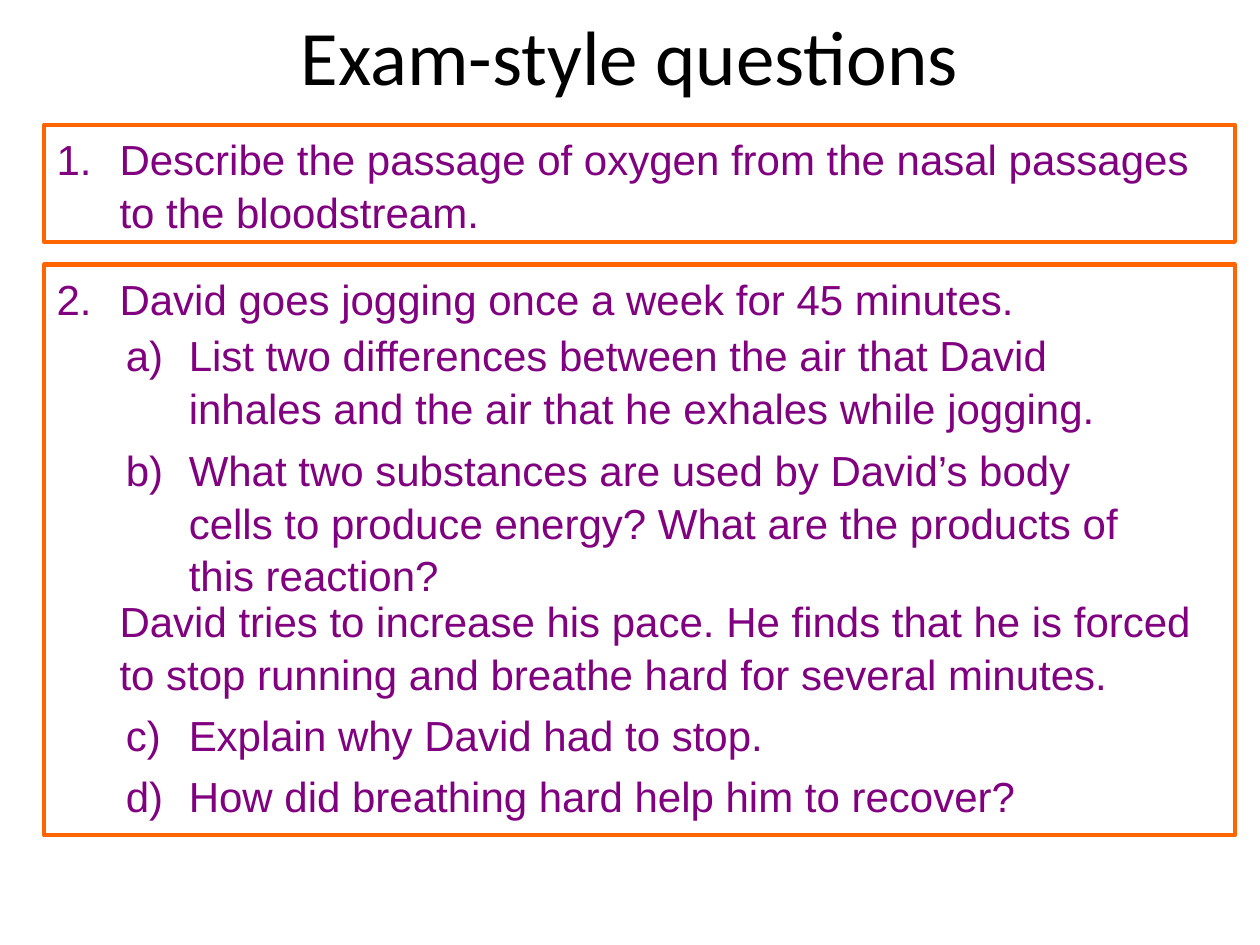
from lxml import etree
from pptx import Presentation
from pptx.dml.color import RGBColor
from pptx.enum.shapes import MSO_SHAPE
from pptx.enum.text import MSO_ANCHOR, PP_ALIGN
from pptx.oxml.ns import qn
from pptx.util import Inches, Pt

RECTANGLE = MSO_SHAPE.RECTANGLE
TOP, MIDDLE = MSO_ANCHOR.TOP, MSO_ANCHOR.MIDDLE
LEFT, CENTER = PP_ALIGN.LEFT, PP_ALIGN.CENTER

THEME = {
    "title": {"font": "Calibri", "size": 44, "color": "000000"},
    "body": {"font": "Arial", "size": 24, "color": "800080"},
    "border": "FF6600",
    "border_width": 2.5,
    "line_spacing": 1.05,
    "paragraph_gap": 4.8,
    "hanging_indent": 0.5,
}
SLIDE_WIDTH, SLIDE_HEIGHT = 10, 7.5
QUESTION_COLUMN = (0.35, 9.45)  # left, width
PART_COLUMN = (0.9, 8.43)
NUMBER, LETTER = "arabicPeriod", "alphaLcParenR"

TITLE = "Exam-style questions"
# column, top, height, framed, numbering scheme, first number, paragraphs
BLOCKS = [
    (QUESTION_COLUMN, 0.99, 0.93, True, NUMBER, 1, [
        "Describe the passage of oxygen from the nasal passages to the bloodstream."]),
    (QUESTION_COLUMN, 2.1, 4.53, True, NUMBER, 2, [
        "David goes jogging once a week for 45 minutes."]),
    (PART_COLUMN, 2.55, 2.18, False, LETTER, 1, [
        "List two differences between the air that David inhales and the air "
        "that he exhales while jogging.",
        "What two substances are used by David’s body cells to produce energy? "
        "What are the products of this reaction?"]),
    (QUESTION_COLUMN, 4.66, 0.9, False, None, None, [
        "David tries to increase his pace. He finds that he is forced to stop "
        "running and breathe hard for several minutes."]),
    (PART_COLUMN, 5.56, 0.98, False, LETTER, 3, [
        "Explain why David had to stop.",
        "How did breathing hard help him to recover?"]),
]


def add_text(paragraph, text, style):
    run = paragraph.add_run()
    run.text = text
    run.font.name = style["font"]
    run.font.size = Pt(style["size"])
    run.font.color.rgb = RGBColor.from_string(style["color"])


def set_numbering(paragraph, scheme, start):
    """Indent the paragraph, with a hanging automatic number if it has a scheme."""
    properties = paragraph._p.get_or_add_pPr()
    indent = Inches(THEME["hanging_indent"])
    properties.set("marL", str(indent))
    properties.set("indent", str(-indent if scheme else 0))
    if scheme:
        etree.SubElement(properties, qn("a:buFont"), typeface=THEME["body"]["font"])
        etree.SubElement(properties, qn("a:buAutoNum"), type=scheme, startAt=str(start))


def add_frame(slide, box):
    shape = slide.shapes.add_shape(RECTANGLE, *box)
    shape.shadow.inherit = False
    shape.fill.background()
    shape.line.color.rgb = RGBColor.from_string(THEME["border"])
    shape.line.width = Pt(THEME["border_width"])
    return shape


def add_title(slide):
    width = 0.9 * SLIDE_WIDTH
    left = (SLIDE_WIDTH - width) / 2
    shape = slide.shapes.add_textbox(
        Inches(left), Inches(-0.19), Inches(width), Inches(1.25))
    frame = shape.text_frame
    frame.word_wrap = True
    frame.vertical_anchor = MIDDLE
    frame.paragraphs[0].alignment = CENTER
    add_text(frame.paragraphs[0], TITLE, THEME["title"])


def add_block(slide, column, top, height, framed, scheme, start, texts):
    left, width = column
    box = [Inches(value) for value in (left, top, width, height)]
    shape = add_frame(slide, box) if framed else slide.shapes.add_textbox(*box)
    frame = shape.text_frame
    frame.word_wrap = True
    frame.vertical_anchor = TOP
    for index, text in enumerate(texts):
        paragraph = frame.add_paragraph() if index else frame.paragraphs[0]
        paragraph.alignment = LEFT
        paragraph.line_spacing = THEME["line_spacing"]
        paragraph.space_before = Pt(THEME["paragraph_gap"] if index else 0)
        set_numbering(paragraph, scheme, start)
        add_text(paragraph, text, THEME["body"])


def main():
    presentation = Presentation()
    presentation.slide_width = Inches(SLIDE_WIDTH)
    presentation.slide_height = Inches(SLIDE_HEIGHT)
    slide = presentation.slides.add_slide(presentation.slide_layouts[6])
    add_title(slide)
    for block in BLOCKS:
        add_block(slide, *block)
    presentation.save("out.pptx")


if __name__ == "__main__":
    main()
